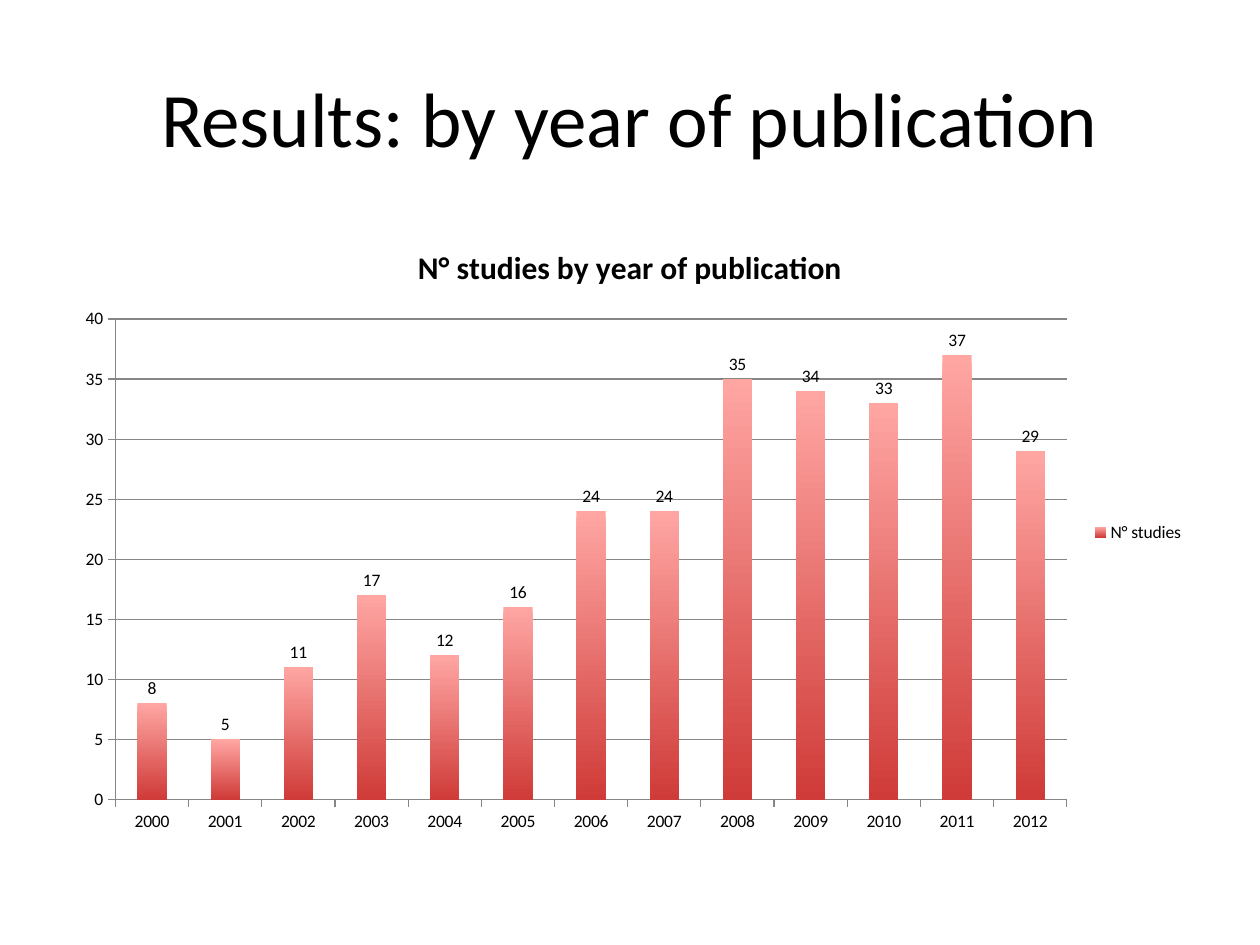
from dataclasses import dataclass

from pptx import Presentation
from pptx.chart.data import CategoryChartData
from pptx.dml.color import RGBColor
from pptx.enum.chart import XL_CHART_TYPE, XL_LABEL_POSITION, XL_LEGEND_POSITION, XL_TICK_MARK
from pptx.enum.text import MSO_ANCHOR, PP_ALIGN
from pptx.util import Inches, Pt


@dataclass(frozen=True)
class Theme:
    font: str = "Calibri"
    ink: RGBColor = RGBColor(0x00, 0x00, 0x00)
    rule: RGBColor = RGBColor(0x86, 0x86, 0x86)
    bar_top: RGBColor = RGBColor(0xFF, 0xA6, 0xA3)
    bar_bottom: RGBColor = RGBColor(0xCF, 0x3B, 0x38)
    heading_size: Pt = Pt(44)
    chart_title_size: Pt = Pt(18)
    chart_size: Pt = Pt(10)
    rule_width: Pt = Pt(0.75)


@dataclass(frozen=True)
class Box:
    left: float
    top: float
    width: float
    height: float

    def lengths(self) -> tuple:
        return tuple(Inches(n) for n in (self.left, self.top, self.width, self.height))


THEME = Theme()
HEADING_BOX = Box(0.5, 0.3, 9, 1.25)
CHART_BOX = Box(0.5, 1.75, 9, 4.95)
FIRST_YEAR = 2000
STUDIES = (8, 5, 11, 17, 12, 16, 24, 24, 35, 34, 33, 37, 29)


def set_font(font, size: Pt, bold: bool = False) -> None:
    for key, value in {"name": THEME.font, "size": size, "bold": bold}.items():
        setattr(font, key, value)
    font.color.rgb = THEME.ink


def set_rule(line) -> None:
    line.color.rgb = THEME.rule
    line.width = THEME.rule_width


def add_heading(slide, text: str, box: Box) -> None:
    frame = slide.shapes.add_textbox(*box.lengths()).text_frame
    frame.word_wrap = True
    frame.vertical_anchor = MSO_ANCHOR.MIDDLE
    paragraph = frame.paragraphs[0]
    paragraph.alignment = PP_ALIGN.CENTER
    heading = paragraph.add_run()
    heading.text = text
    set_font(heading.font, THEME.heading_size)


def style_axes(chart) -> None:
    for axis in (chart.category_axis, chart.value_axis):
        axis.major_tick_mark = XL_TICK_MARK.OUTSIDE
        axis.minor_tick_mark = XL_TICK_MARK.NONE
        set_rule(axis.format.line)
    scale = {
        "minimum_scale": 0,
        "maximum_scale": 40,
        "major_unit": 5,
        "has_major_gridlines": True,
    }
    for key, value in scale.items():
        setattr(chart.value_axis, key, value)
    set_rule(chart.value_axis.major_gridlines.format.line)


def style_bars(plot) -> None:
    plot.gap_width = 150
    plot.vary_by_categories = False
    studies = plot.series[0]
    studies.invert_if_negative = False
    fill = studies.format.fill
    fill.gradient()
    fill.gradient_angle = 270
    for stop, color in zip(fill.gradient_stops, (THEME.bar_top, THEME.bar_bottom)):
        stop.color.rgb = color
    labels = studies.data_labels
    labels.show_value = True
    labels.position = XL_LABEL_POSITION.OUTSIDE_END
    set_font(labels.font, THEME.chart_size)


def add_studies_chart(slide, box: Box) -> None:
    data = CategoryChartData()
    data.categories = [str(FIRST_YEAR + i) for i in range(len(STUDIES))]
    data.add_series("N° studies", STUDIES)
    chart = slide.shapes.add_chart(
        XL_CHART_TYPE.COLUMN_CLUSTERED, *box.lengths(), data
    ).chart
    set_font(chart.font, THEME.chart_size)
    chart.has_title = True
    caption = chart.chart_title.text_frame.paragraphs[0].add_run()
    caption.text = "N° studies by year of publication"
    set_font(caption.font, THEME.chart_title_size, bold=True)
    chart.chart_title.include_in_layout = False
    chart.has_legend = True
    chart.legend.position = XL_LEGEND_POSITION.RIGHT
    chart.legend.include_in_layout = False
    style_axes(chart)
    style_bars(chart.plots[0])


def main() -> None:
    deck = Presentation()
    deck.slide_width = Inches(10)
    deck.slide_height = Inches(7.5)
    slide = deck.slides.add_slide(deck.slide_layouts[6])
    add_heading(slide, "Results: by year of publication", HEADING_BOX)
    add_studies_chart(slide, CHART_BOX)
    deck.save("out.pptx")


if __name__ == "__main__":
    main()
